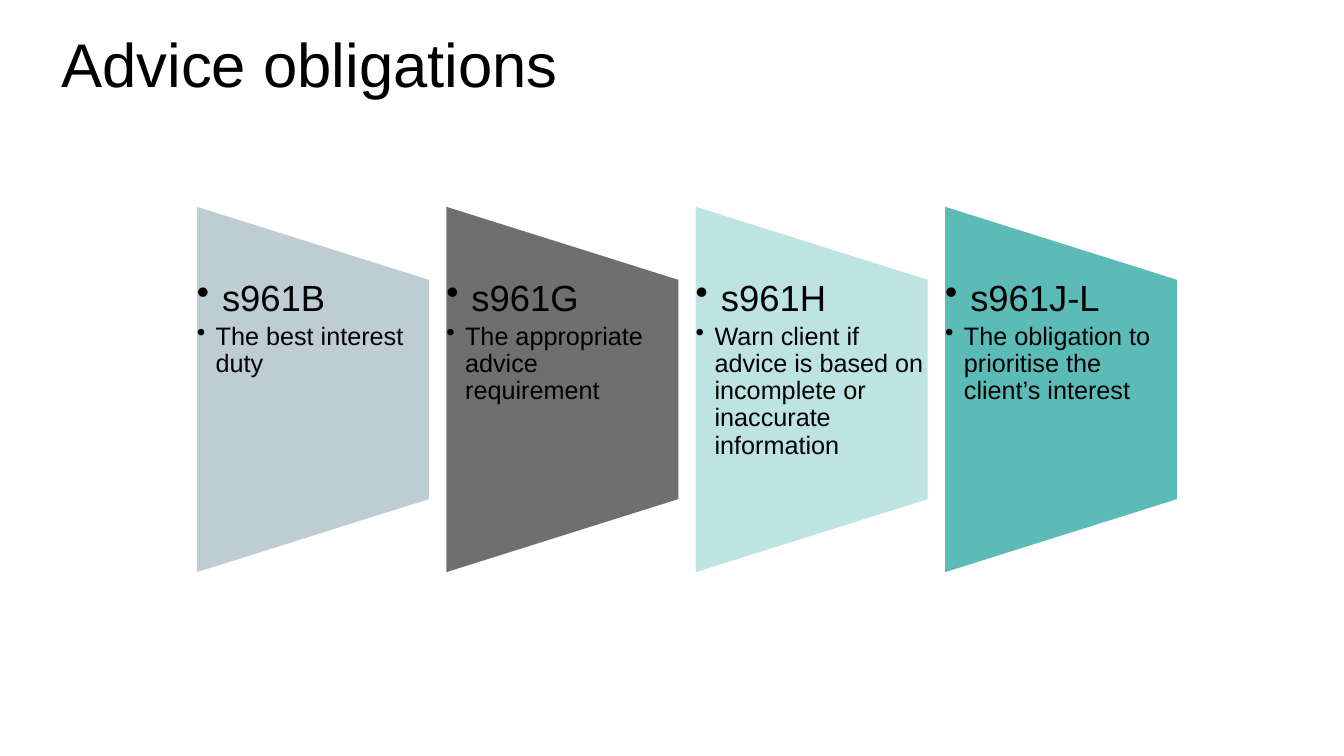
from dataclasses import dataclass

from lxml import etree
from pptx import Presentation
from pptx.dml.color import RGBColor
from pptx.enum.text import MSO_ANCHOR, MSO_AUTO_SIZE
from pptx.oxml.ns import qn
from pptx.util import Pt

MIDDLE, TOP = MSO_ANCHOR.MIDDLE, MSO_ANCHOR.TOP
NO_FIT = MSO_AUTO_SIZE.NONE


@dataclass(frozen=True)
class Theme:
    font: str = "Arial"
    text: str = "000000"
    panels: tuple = ("BECCD3", "706F6F", "BDE4E2", "5BBBB7")
    title_size: float = 44
    section_size: float = 26
    duty_size: float = 18
    line_spacing: float = 0.9


THEME = Theme()

OBLIGATIONS = [
    ("s961B", "The best interest duty"),
    ("s961G", "The appropriate advice requirement"),
    ("s961H", "Warn client if advice is based on incomplete or inaccurate information"),
    ("s961J-L", "The obligation to prioritise the client’s interest"),
]


def set_all(target, values):
    for name, value in values.items():
        setattr(target, name, value)


def add_text_frame(page, box, inset, anchor):
    frame = page.shapes.add_textbox(*map(Pt, box)).text_frame
    set_all(frame, {
        "word_wrap": True, "auto_size": NO_FIT, "vertical_anchor": anchor,
        "margin_left": Pt(inset), "margin_right": Pt(inset),
        "margin_top": Pt(inset), "margin_bottom": Pt(inset),
    })
    return frame


def write(para, text, size):
    para.line_spacing = THEME.line_spacing
    span = para.add_run()
    span.text = text
    set_all(span.font, {"name": THEME.font, "size": Pt(size)})
    span.font.color.rgb = RGBColor.from_string(THEME.text)


def add_bullet(para, indent):
    props = para._p.get_or_add_pPr()
    props.set("marL", str(Pt(indent)))
    props.set("indent", str(-Pt(indent)))
    etree.SubElement(props, qn("a:buChar")).set("char", "•")


def add_title(page, box, text):
    frame = add_text_frame(page, box, 3.6, MIDDLE)
    write(frame.paragraphs[0], text, THEME.title_size)


def add_panel(page, box, color, section, duty):
    left, top, width, height = box
    taper = height * 0.2
    right, bottom = left + width, top + height

    # Trapezoid narrowing to the right
    outline = page.shapes.build_freeform(Pt(left), Pt(bottom), scale=1.0)
    corners = [(left, top), (right, top + taper), (right, bottom - taper)]
    outline.add_line_segments([(Pt(x), Pt(y)) for x, y in corners], close=True)
    panel = outline.convert_to_shape()
    panel.shadow.inherit = False
    panel.fill.solid()
    panel.fill.fore_color.rgb = RGBColor.from_string(color)
    panel.line.fill.background()

    # Section number with its duty below
    text_box = (left, top + taper, width, height - 2 * taper)
    frame = add_text_frame(page, text_box, 0, TOP)
    heading = frame.paragraphs[0]
    add_bullet(heading, 18)
    write(heading, section, THEME.section_size)
    detail = frame.add_paragraph()
    set_all(detail, {"level": 1, "space_before": Pt(3)})
    add_bullet(detail, 13.5)
    write(detail, duty, THEME.duty_size)


def add_panel_row(page, box, obligations):
    left, top, width, height = box
    gap = 12.4
    panel_width = (width + gap) / len(obligations) - gap
    for index, (color, words) in enumerate(zip(THEME.panels, obligations)):
        panel_left = left + index * (panel_width + gap)
        add_panel(page, (panel_left, top, panel_width, height), color, *words)


def main():
    deck = Presentation()
    set_all(deck, {"slide_width": Pt(960), "slide_height": Pt(540)})
    page = deck.slides.add_slide(deck.slide_layouts[6])
    add_panel_row(page, (140.6, 147.7, 700.2, 261), OBLIGATIONS)
    add_title(page, (40.3, -4.3, 828, 104.4), "Advice obligations")
    deck.save("out.pptx")


if __name__ == "__main__":
    main()
